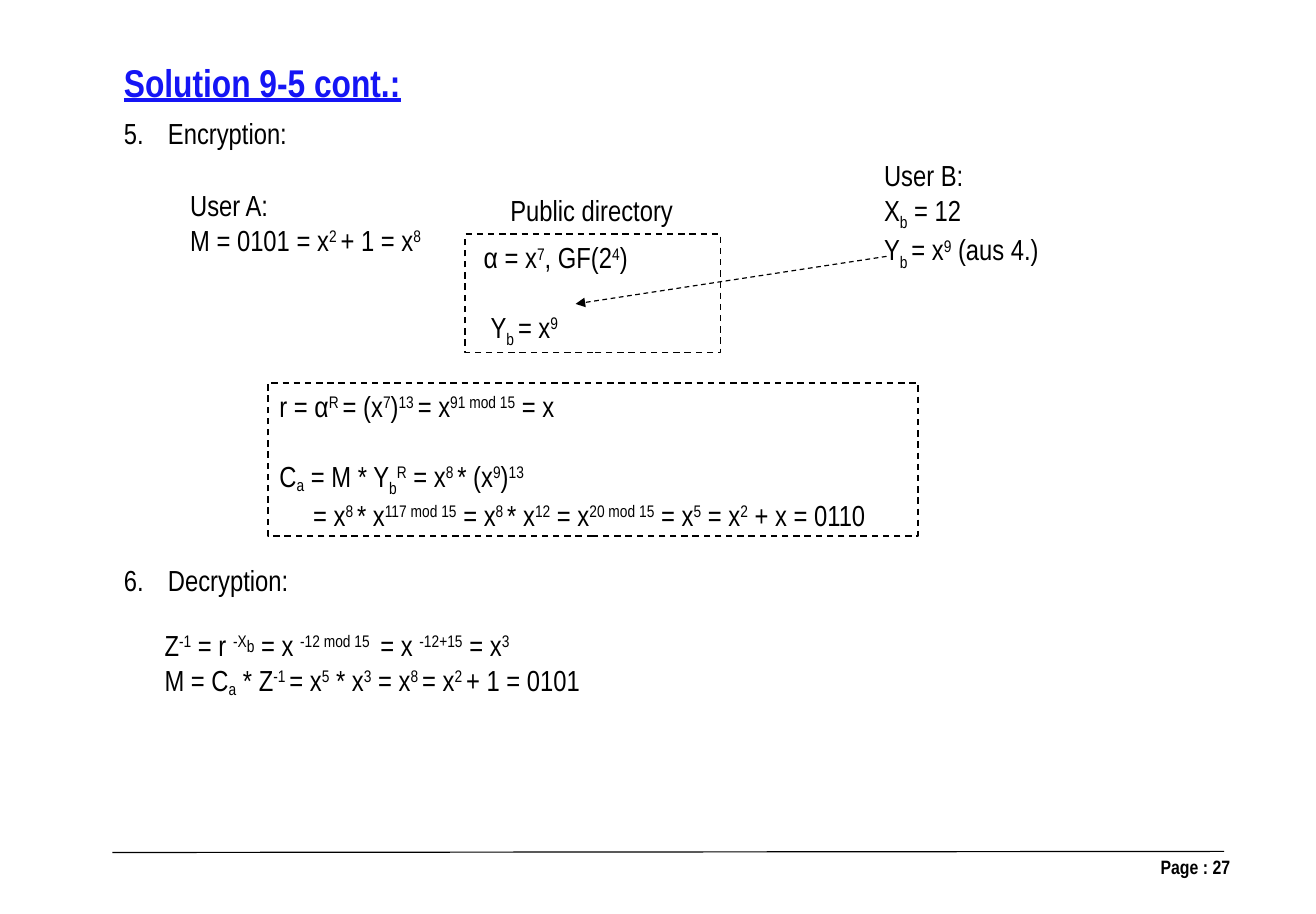
from lxml.etree import SubElement
from pptx import Presentation
from pptx.dml.color import RGBColor as RGB
from pptx.enum.dml import MSO_LINE_DASH_STYLE as DASH
from pptx.enum.shapes import MSO_CONNECTOR as CONNECTOR, MSO_SHAPE as SHAPE
from pptx.enum.text import MSO_ANCHOR as ANCHOR, MSO_AUTO_SIZE as FIT, PP_ALIGN as ALIGN
from pptx.oxml.ns import qn
from pptx.util import Inches, Pt

THEME = {
    "font": "Arial Narrow",
    "ink": RGB(0, 0, 0),
    "title": RGB(0x15, 0x15, 0xF5),
    "paper": RGB(255, 255, 255),
    "title_size": Pt(24),
    "body_size": Pt(18),
    "page_size": Pt(12),
    "line_gap": Pt(21.6),
    "box_line": Pt(1),
    "thin_line": Pt(0.75),
}
BASELINES = {"^": 30000, "_": -25000, "~": -14000, "'": 15000}

deck = Presentation()
deck.slide_width, deck.slide_height = Inches(11.34), Inches(7.88)
slide = deck.slides.add_slide(deck.slide_layouts[6])
column, row = deck.slide_width / 100, deck.slide_height / 100


def place(*cells):
    return [round(cell * unit) for cell, unit in zip(cells, (column, row) * 2)]


def write(frame, lines, size="body_size", color="ink", strong=False):
    for index, line in enumerate(lines):
        paragraph = frame.paragraphs[0] if index == 0 else frame.add_paragraph()
        for piece in line.split("|"):
            shift = BASELINES.get(piece[0])
            run = paragraph.add_run()
            run.text = piece[1:] if shift else piece
            if shift:
                run.font.size = THEME[size]
                run._r.get_or_add_rPr().set("baseline", str(shift))
        paragraph.font.name = THEME["font"]
        paragraph.font.size = THEME[size]
        paragraph.font.bold = strong
        paragraph.font.color.rgb = THEME[color]
    return frame.paragraphs


boxes = [
    ((35.36, 25.63, 19.4, 12.94), False, {0: 0.06, 1: 0.12},
     ["α = x|^7|, GF(2|^4|)", "Y|_b |= x|^9"]),
    ((20.37, 41.88, 49.38, 16.75), True, {2: 0.29},
     ["r = α|^R |= (x|^7|)|^13 |= x|^91 mod 15| = x",
      "C|~a| = M * Y|_b|^R| = x|^8 |* (x|^9|)|^13",
      "= x|^8 |* x|^117 mod 15| = x|^8 |* x|^12| = x|^20 mod 15| = x|^5| = x|^2| + x = 0110"]),
]
for cells, filled, indents, formulas in boxes:
    box = slide.shapes.add_shape(SHAPE.RECTANGLE, *place(*cells))
    box.shadow.inherit = False
    if filled:
        box.fill.solid()
        box.fill.fore_color.rgb = THEME["paper"]
    else:
        box.fill.background()
    box.line.color.rgb = THEME["ink"]
    box.line.width = THEME["box_line"]
    box.line.dash_style = DASH.DASH
    box.text_frame.vertical_anchor = ANCHOR.TOP
    box.text_frame.word_wrap = True
    steps = write(box.text_frame, formulas)
    for step in steps:
        step.alignment = ALIGN.LEFT
    for index, indent in indents.items():
        steps[index]._p.get_or_add_pPr().set("marL", str(Inches(indent)))
    steps[1].space_before = THEME["line_gap"]

notes = [
    ((37.92, 20.43, 14.29, 5.08), ["Public directory"]),
    ((11.64, 68.02, 35.19, 9.01),
     ["Z|^-1| = r |^-X|'b| = x |^-12 mod 15 | = x |^-12+15| = x|^3",
      "M = C|~a| * Z|^-1 |= x|^5| * x|^3| = x|^8 |= x|^2 |+ 1 = 0101"]),
    ((13.58, 19.92, 20.55, 9.01), ["User A:", "M = 0101 = x|^2 |+ 1 = x|^8"]),
    ((66.31, 16.62, 13.93, 12.94),
     ["User B:", "X|_b| = 12", "Y|_b |= x|^9| (aus 4.)"]),
]
for cells, lines in notes:
    note = slide.shapes.add_textbox(*place(*cells)).text_frame
    note.word_wrap, note.auto_size = False, FIT.SHAPE_TO_FIT_TEXT
    write(note, lines)

for number, top, heading in [(5, 12.06, "Encryption:"), (6, 60.91, "Decryption:")]:
    section = slide.shapes.add_textbox(*place(8.55, top, 14.29, 5.08)).text_frame
    section.word_wrap, section.auto_size = False, FIT.SHAPE_TO_FIT_TEXT
    numbering = section.paragraphs[0]._p.get_or_add_pPr()
    numbering.set("marL", str(Inches(0.38)))
    numbering.set("indent", str(Inches(-0.38)))
    SubElement(numbering, qn("a:buFont"), typeface="+mj-lt")
    SubElement(numbering, qn("a:buAutoNum"), type="arabicPeriod", startAt=str(number))
    write(section, [heading])

title = slide.shapes.add_textbox(*place(8.55, 5.84, 23.1, 6.35)).text_frame
title.word_wrap, title.auto_size = False, FIT.SHAPE_TO_FIT_TEXT
write(title, ["Solution 9-5 cont.:"], "title_size", "title", True)[0].font.underline = True

page = slide.shapes.add_textbox(*place(71.78, 92.89, 22.57, 3.81)).text_frame
page.word_wrap = True
write(page, ["Page : 27"], "page_size", strong=True)[0].alignment = ALIGN.RIGHT

for ends, is_arrow in [((8.55, 93.27, 93.03, 93.15), False),
                       ((67.37, 28.05, 43.74, 33.25), True)]:
    link = slide.shapes.add_connector(CONNECTOR.STRAIGHT, *place(*ends))
    link.line.color.rgb = THEME["ink"]
    link.line.width = THEME["thin_line"]
    if is_arrow:
        link.line.dash_style = DASH.DASH
        SubElement(link.line._get_or_add_ln(), qn("a:tailEnd"), type="triangle")
    SubElement(link._element.spPr, qn("a:effectLst"))

deck.save("out.pptx")
